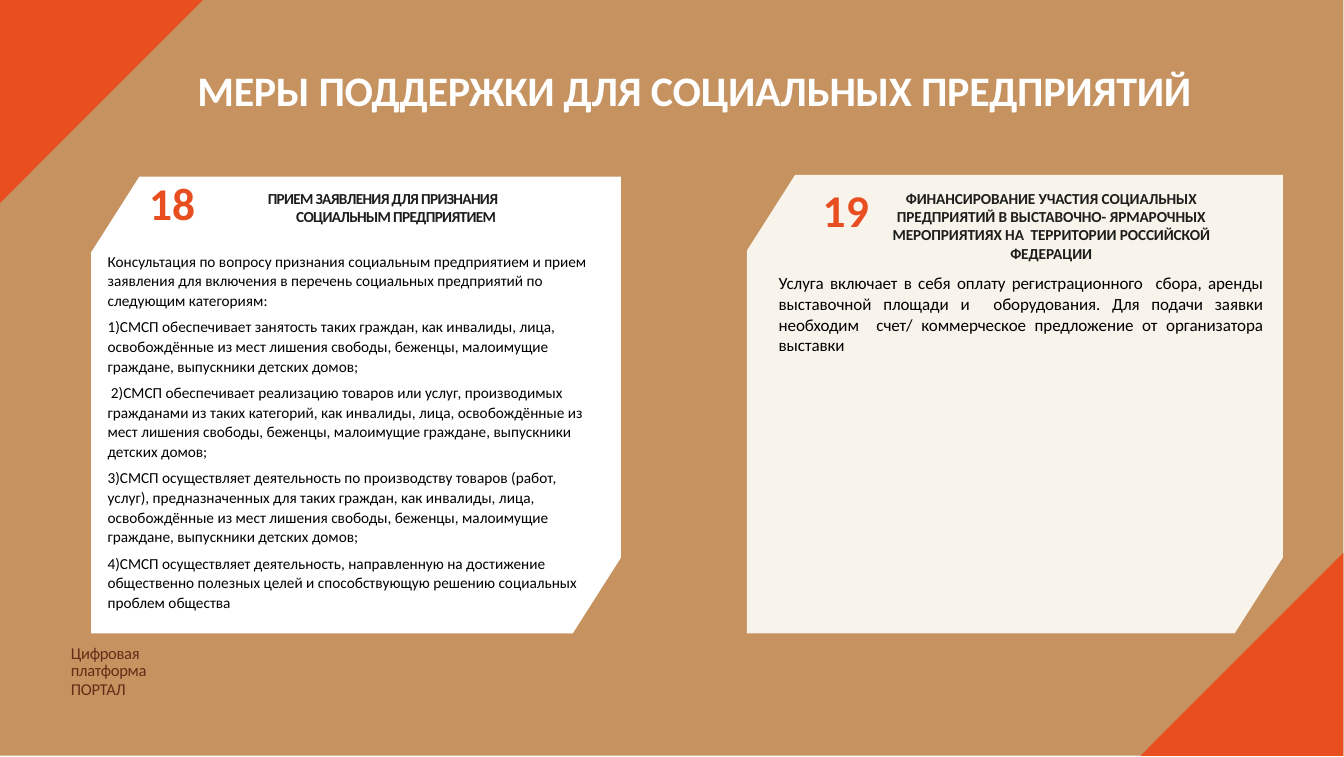
"""Builds the slide on support measures for social enterprises."""
from dataclasses import dataclass

from lxml import etree
from pptx import Presentation
from pptx.dml.color import RGBColor
from pptx.enum import shapes, text
from pptx.util import Inches, Pt

TITLE = "МЕРЫ ПОДДЕРЖКИ ДЛЯ СОЦИАЛЬНЫХ ПРЕДПРИЯТИЙ"
ADMISSION_HEADING = ["ПРИЕМ ЗАЯВЛЕНИЯ ДЛЯ ПРИЗНАНИЯ", "СОЦИАЛЬНЫМ ПРЕДПРИЯТИЕМ"]
ADMISSION_RULES = [
    "Консультация по вопросу признания социальным предприятием и прием заявления для включения "
    "в перечень социальных предприятий по следующим категориям:",
    "1)СМСП обеспечивает занятость таких граждан, как инвалиды, лица, освобождённые из мест "
    "лишения свободы, беженцы, малоимущие граждане, выпускники детских домов;",
    " 2)СМСП обеспечивает реализацию товаров или услуг, производимых гражданами из таких "
    "категорий, как инвалиды, лица, освобождённые из мест лишения свободы, беженцы, малоимущие "
    "граждане, выпускники детских домов;",
    "3)СМСП осуществляет деятельность по производству товаров (работ, услуг), предназначенных "
    "для таких граждан, как инвалиды, лица, освобождённые из мест лишения свободы, беженцы, "
    "малоимущие граждане, выпускники детских домов;",
    "4)СМСП осуществляет деятельность, направленную на достижение общественно полезных целей и "
    "способствующую решению социальных проблем общества",
]
EXHIBITION_HEADING = [
    "ФИНАНСИРОВАНИЕ УЧАСТИЯ СОЦИАЛЬНЫХ ПРЕДПРИЯТИЙ В ВЫСТАВОЧНО- ЯРМАРОЧНЫХ МЕРОПРИЯТИЯХ НА  "
    "ТЕРРИТОРИИ РОССИЙСКОЙ ФЕДЕРАЦИИ"
]
EXHIBITION_TEXT = [
    "Услуга включает в себя оплату регистрационного  сбора, аренды выставочной площади и  "
    "оборудования. Для подачи заявки необходим  счет/ коммерческое предложение от организатора "
    "выставки"
]
PLATFORM = ["Цифровая платформа", "ПОРТАЛ"]
NUMBERS = [("18", 2.44, 2.86), ("19", 13.46, 2.97)]


@dataclass(frozen=True)
class Theme:
    font: str = "Calibri"
    ground: str = "C59260"
    accent: str = "E84E20"
    white: str = "FFFFFF"
    cream: str = "F8F4EB"
    ink: str = "000000"
    heading: str = "1D1D1B"
    platform: str = "672C17"
    title_size: float = 49.5
    number_size: float = 53.5
    text_size: float = 20
    small_size: float = 18
    platform_size: float = 19.5


THEME = Theme()
WIDTH, HEIGHT = 21.99, 12.38
PANEL_W, PANEL_H = 21.98, 12.36
CORNER = 3.32
CUT_X, CUT_Y = 0.79, 1.24
HEADING_SHIFT = 0.43
CENTER, JUSTIFY, LEFT = text.PP_ALIGN.CENTER, text.PP_ALIGN.JUSTIFY, text.PP_ALIGN.LEFT


def paint(shape, color):
    shape.shadow.inherit = False
    shape.fill.solid()
    shape.fill.fore_color.rgb = RGBColor.from_string(color)
    shape.line.fill.background()


def draw_outline(slide, points, color):
    corners = [(Inches(x), Inches(y)) for x, y in points]
    builder = slide.shapes.build_freeform(*corners[0])
    builder.add_line_segments(corners[1:], close=True)
    paint(builder.convert_to_shape(), color)


def draw_card(slide, left, top, right, bottom, color):
    draw_outline(slide, [
        (right, top), (left + CUT_X, top), (left, top + CUT_Y),
        (left, bottom), (right - CUT_X, bottom), (right, bottom - CUT_Y),
    ], color)


def write(slide, paragraphs, box, holder=None, size=THEME.small_size, color=THEME.ink,
          bold=False, align=LEFT, inset=(0.1, 0.05), spacing=0, line=1.0, before=0, after=0,
          shifts=()):
    place = [Inches(length) for length in box]
    if holder is None:
        holder = slide.shapes.add_textbox(*place)
    else:
        holder.left, holder.top, holder.width, holder.height = place
        holder.element.getparent().append(holder.element)
    frame = holder.text_frame
    frame.word_wrap = True
    frame.auto_size = text.MSO_AUTO_SIZE.NONE
    frame.vertical_anchor = text.MSO_ANCHOR.TOP
    frame.margin_left = frame.margin_right = Inches(inset[0])
    frame.margin_top = frame.margin_bottom = Inches(inset[1])
    lines = line if isinstance(line, list) else [line] * len(paragraphs)
    for index, words in enumerate(paragraphs):
        paragraph = frame.paragraphs[0] if index == 0 else frame.add_paragraph()
        paragraph.alignment = align
        paragraph.line_spacing = lines[index]
        paragraph.space_before, paragraph.space_after = Pt(before), Pt(after)
        properties = paragraph._p.get_or_add_pPr()
        properties.set("marL", str(Inches(shifts[index] if shifts else 0)))
        properties.set("indent", "0")
        namespace = properties.nsmap["a"]
        etree.SubElement(properties, f"{{{namespace}}}buNone")
        run = paragraph.add_run()
        run.text = words
        run.font.name, run.font.size, run.font.bold = THEME.font, Pt(size), bold
        run.font.color.rgb = RGBColor.from_string(color)
        run.font._element.set("spc", str(round(spacing * 100)))


def main():
    deck = Presentation()
    deck.slide_width, deck.slide_height = Inches(WIDTH), Inches(HEIGHT)
    slide = deck.slides.add_slide(deck.slide_layouts[1])
    title, rules = slide.placeholders

    ground = slide.shapes.add_shape(
        shapes.MSO_SHAPE.RECTANGLE, 0, 0, Inches(PANEL_W), Inches(PANEL_H))
    paint(ground, THEME.ground)
    draw_card(slide, 1.49, 2.89, 10.16, 10.36, THEME.white)
    draw_card(slide, 12.22, 2.86, 20.99, 10.36, THEME.cream)
    draw_outline(slide, [(CORNER, 0), (0, 0), (0, CORNER)], THEME.accent)
    draw_outline(slide, [(PANEL_W, PANEL_H - CORNER), (PANEL_W - CORNER, PANEL_H),
                         (PANEL_W, PANEL_H)], THEME.accent)

    write(slide, [TITLE], (3.23, 1.05, 16.28, 0.85), holder=title, size=THEME.title_size,
          color=THEME.white, bold=True, inset=(0, 0.01), spacing=-0.3, before=0.9)
    write(slide, ADMISSION_RULES, (1.66, 4.05, 8.16, 6.47), holder=rules, line=1.07, after=8)
    write(slide, EXHIBITION_TEXT, (12.74, 4.44, 7.92, 1.39), size=THEME.text_size,
          align=JUSTIFY, inset=(0, 0.01), spacing=-0.1, line=1.02, before=0.6)
    write(slide, PLATFORM, (1.16, 10.58, 2.41, 0.61), size=THEME.platform_size,
          color=THEME.platform, inset=(0, 0), spacing=-0.4, line=[Pt(19.2), Pt(23.1)])
    for number, left, top in NUMBERS:
        write(slide, [number], (left, top, 0.78, 0.92), size=THEME.number_size,
              color=THEME.accent, bold=True, inset=(0, 0.01), spacing=0.2, before=1.1)
    write(slide, ADMISSION_HEADING, (3.14, 3.04, 6.25, 1.01), color=THEME.heading, bold=True,
          align=CENTER, spacing=-0.8, shifts=(0, HEADING_SHIFT))
    write(slide, EXHIBITION_HEADING, (14.16, 3.04, 6.08, 1.62), color=THEME.heading, bold=True,
          align=CENTER, spacing=-0.1)
    deck.save("out.pptx")


if __name__ == "__main__":
    main()
